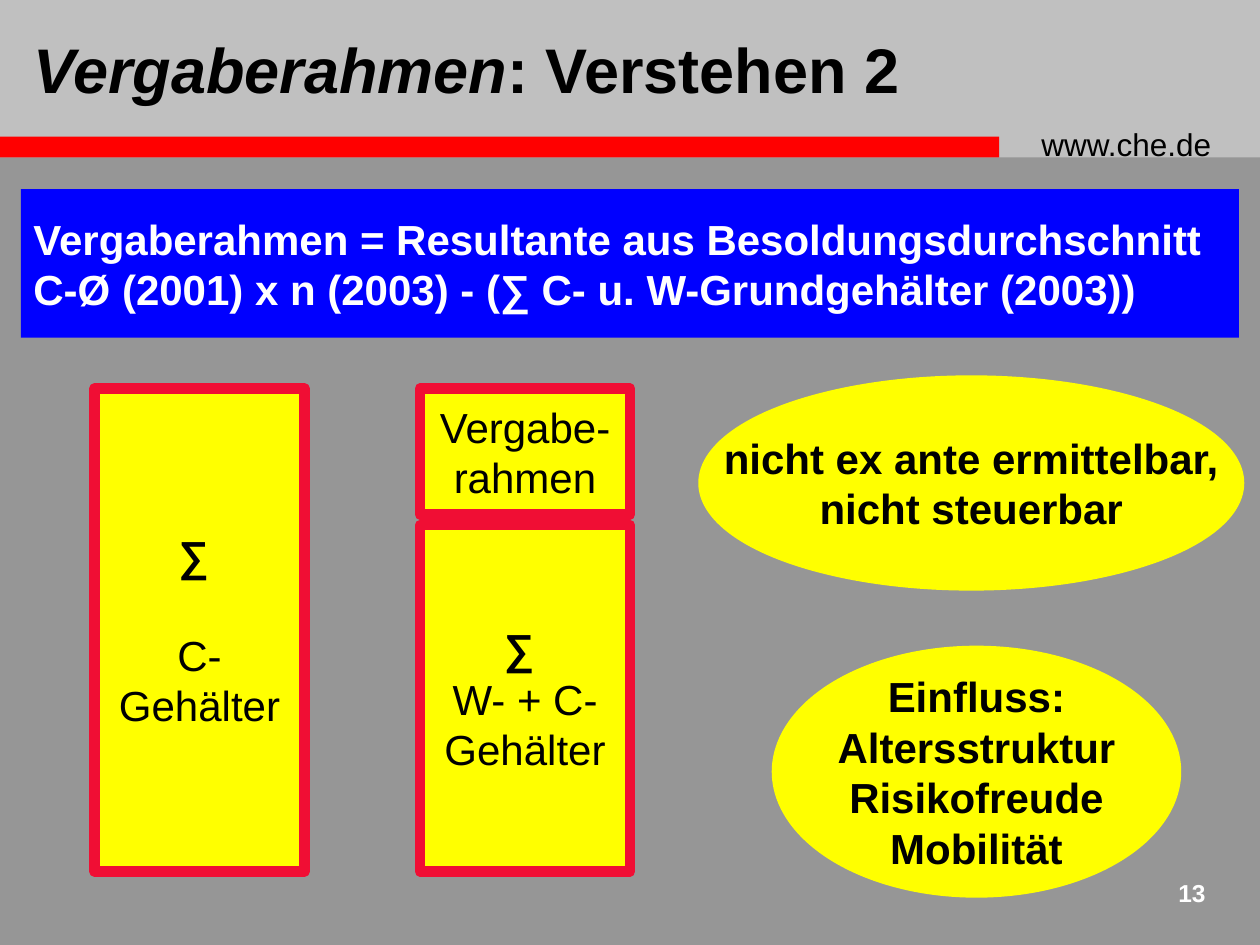
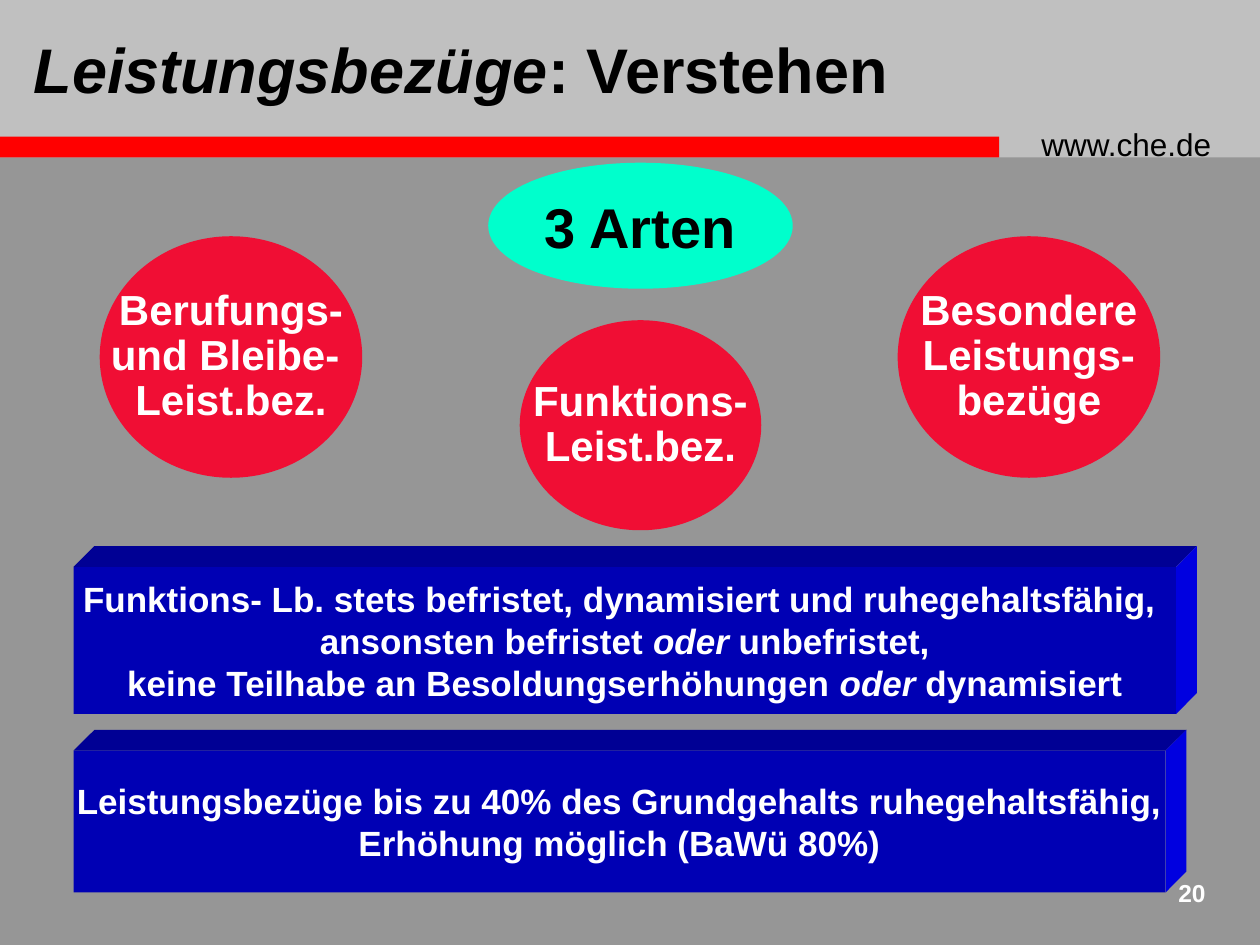
from dataclasses import dataclass

from pptx import Presentation
from pptx.dml.color import RGBColor
from pptx.enum.shapes import MSO_SHAPE
from pptx.enum.text import MSO_ANCHOR, PP_ALIGN
from pptx.util import Pt


@dataclass(frozen=True)
class Theme:
    font: str = "Arial"
    back: str = "969696"
    band: str = "C0C0C0"
    stripe: str = "FF0000"
    black: str = "000000"
    white: str = "FFFFFF"
    blue: str = "0000FF"
    front: str = "0000B4"
    top: str = "000094"
    side: str = "0000E0"
    yellow: str = "FFFF00"
    red: str = "F00E34"
    mint: str = "00FFCC"
    title: int = 36
    large: int = 32
    body: int = 24
    small: int = 20
    site: int = 18
    number: int = 14
    edge: int = 6
    depth: int = 12


class Deck:
    """Hold the style and the current slide, and draw each kind of element."""

    def __init__(self, theme):
        self.theme = theme
        self.show = Presentation()
        self.show.slide_width, self.show.slide_height = Pt(720), Pt(540)
        self.layout = self.show.slide_layouts[5]
        self.slide = None

    def frame(self):
        look = self.theme
        fill = self.layout.background.fill
        fill.solid()
        fill.fore_color.rgb = RGBColor.from_string(look.back)
        parts = [
            self.shape(MSO_SHAPE.RECTANGLE, (0, 0, 720, 90), look.band),
            self.shape(MSO_SHAPE.RECTANGLE, (0, 78, 571, 12), look.stripe),
            self.label((588, 67.7, 126, 29), "www.che.de", look.site, look.black),
        ]
        for part in parts:
            self.layout.shapes._spTree.append(part._element)

    def page(self, title, number):
        look = self.theme
        first = self.slide is None
        self.slide = self.show.slides.add_slide(self.layout)
        if first:
            self.frame()
        head = self.slide.shapes.title
        head.left, head.top, head.width, head.height = map(Pt, (12, 0, 582, 78))
        self.letter(head, [title], look.title, look.black, PP_ALIGN.LEFT, wrap=True)
        self.label((654, 498, 42, 30), number, look.number, look.white,
                   PP_ALIGN.RIGHT, light=99)

    def label(self, area, text, size, color, align=PP_ALIGN.LEFT, light=0):
        box = self.slide.shapes.add_textbox(*map(Pt, area))
        self.letter(box, [text], size, color, align, light, wrap=True)
        box.text_frame.vertical_anchor = MSO_ANCHOR.TOP
        return box

    def letter(self, shape, lines, size, color, align=PP_ALIGN.CENTER,
               light=99, wrap=False, pitch=None):
        frame = shape.text_frame
        frame.word_wrap = wrap
        frame.vertical_anchor = MSO_ANCHOR.MIDDLE
        frame.text = "\n".join(line.replace("*", "") for line in lines)
        for row, (para, line) in enumerate(zip(frame.paragraphs, lines)):
            para.alignment = align
            para.line_spacing = pitch
            if "*" in line:
                para.text = ""
                for spot, piece in enumerate(line.split("*")):
                    if piece:
                        run = para.add_run()
                        run.text = piece
                        run.font.italic = spot % 2 == 1
            for run in para.runs:
                run.font.name = self.theme.font
                run.font.size = Pt(size)
                run.font.bold = row < light
                run.font.color.rgb = RGBColor.from_string(color)

    def paint(self, shape, fill, line=None):
        shape.shadow.inherit = False
        shape.fill.solid()
        shape.fill.fore_color.rgb = RGBColor.from_string(fill)
        if line:
            shape.line.color.rgb = RGBColor.from_string(line)
            shape.line.width = Pt(self.theme.edge)
        else:
            shape.line.fill.background()

    def shape(self, kind, area, fill, line=None):
        item = self.slide.shapes.add_shape(kind, *map(Pt, area))
        self.paint(item, fill, line)
        return item

    def panel(self, area, lines):
        look = self.theme
        item = self.shape(MSO_SHAPE.RECTANGLE, area, look.blue)
        self.letter(item, lines, look.body, look.white, PP_ALIGN.LEFT, wrap=True)

    def column(self, area, lines, light):
        look = self.theme
        item = self.shape(MSO_SHAPE.RECTANGLE, area, look.yellow, look.red)
        self.letter(item, lines, look.body, look.black, light=light)
        return item

    def oval(self, area, lines, fill, color, size=None, pitch=None):
        item = self.shape(MSO_SHAPE.OVAL, area, fill, fill)
        self.letter(item, lines, size or self.theme.body, color, pitch=pitch)

    def face(self, points, fill):
        start, *rest = [tuple(map(Pt, point)) for point in points]
        pen = self.slide.shapes.build_freeform(*start)
        pen.add_line_segments(rest, close=True)
        self.paint(pen.convert_to_shape(), fill)

    def block(self, area, lines):
        look, (left, top, width, height) = self.theme, area
        deep, right, low = look.depth, left + width, top + height
        crest = (right + deep, top - deep)
        self.face([(left, top), (left + deep, top - deep), crest, (right, top)],
                  look.top)
        self.face([(right, top), crest, (right + deep, low - deep), (right, low)],
                  look.side)
        item = self.shape(MSO_SHAPE.RECTANGLE, area, look.front)
        self.letter(item, lines, look.small, look.white)


def budget(deck):
    look = deck.theme
    deck.page("*Vergaberahmen*: Verstehen 2", "13")
    deck.panel((12, 108, 696, 85), [
        "Vergaberahmen = Resultante aus Besoldungsdurchschnitt",
        "C-Ø (2001) x n (2003) - (∑ C- u. W-Grundgehälter (2003))"])
    total = deck.column((54, 222, 120, 276), ["∑ ", "C-", "Gehälter"], 1)
    total.text_frame.paragraphs[1].space_before = Pt(28)
    deck.column((240, 300, 120, 198), ["∑ ", "W- + C-", "Gehälter"], 1)
    deck.column((240, 222, 120, 72), ["Vergabe-", "rahmen"], 0)
    notes = [
        ((402, 217.5, 306, 117), ["nicht ex ante ermittelbar,", "nicht steuerbar"]),
        ((444, 372, 228, 138),
         ["Einfluss:", "Altersstruktur", "Risikofreude", "Mobilität"]),
    ]
    for area, lines in notes:
        deck.oval(area, lines, look.yellow, look.black)


def bonus(deck):
    look = deck.theme
    deck.page("*Leistungsbezüge*: Verstehen", "20")
    deck.block((42, 429, 624, 81), [
        "Leistungsbezüge bis zu 40% des Grundgehalts ruhegehaltsfähig,",
        "Erhöhung möglich (BaWü 80%)"])
    deck.block((42, 324, 630, 84), [
        "Funktions- Lb. stets befristet, dynamisiert und ruhegehaltsfähig, ",
        "ansonsten befristet *oder* unbefristet,",
        "keine Teilhabe an Besoldungserhöhungen *oder* dynamisiert"])
    deck.oval((282, 96, 168, 66), ["3 Arten"], look.mint, look.black, look.large)
    kinds = [
        ((60, 138, 144, 132), ["Berufungs-", "und Bleibe- ", "Leist.bez."]),
        ((300, 186, 132, 114), ["Funktions-", "Leist.bez."]),
        ((516, 138, 144, 132), ["Besondere", "Leistungs-", "bezüge"]),
    ]
    for area, lines in kinds:
        deck.oval(area, lines, look.red, look.white, pitch=0.9)


def main():
    deck = Deck(Theme())
    budget(deck)
    bonus(deck)
    deck.show.save("out.pptx")


if __name__ == "__main__":
    main()
